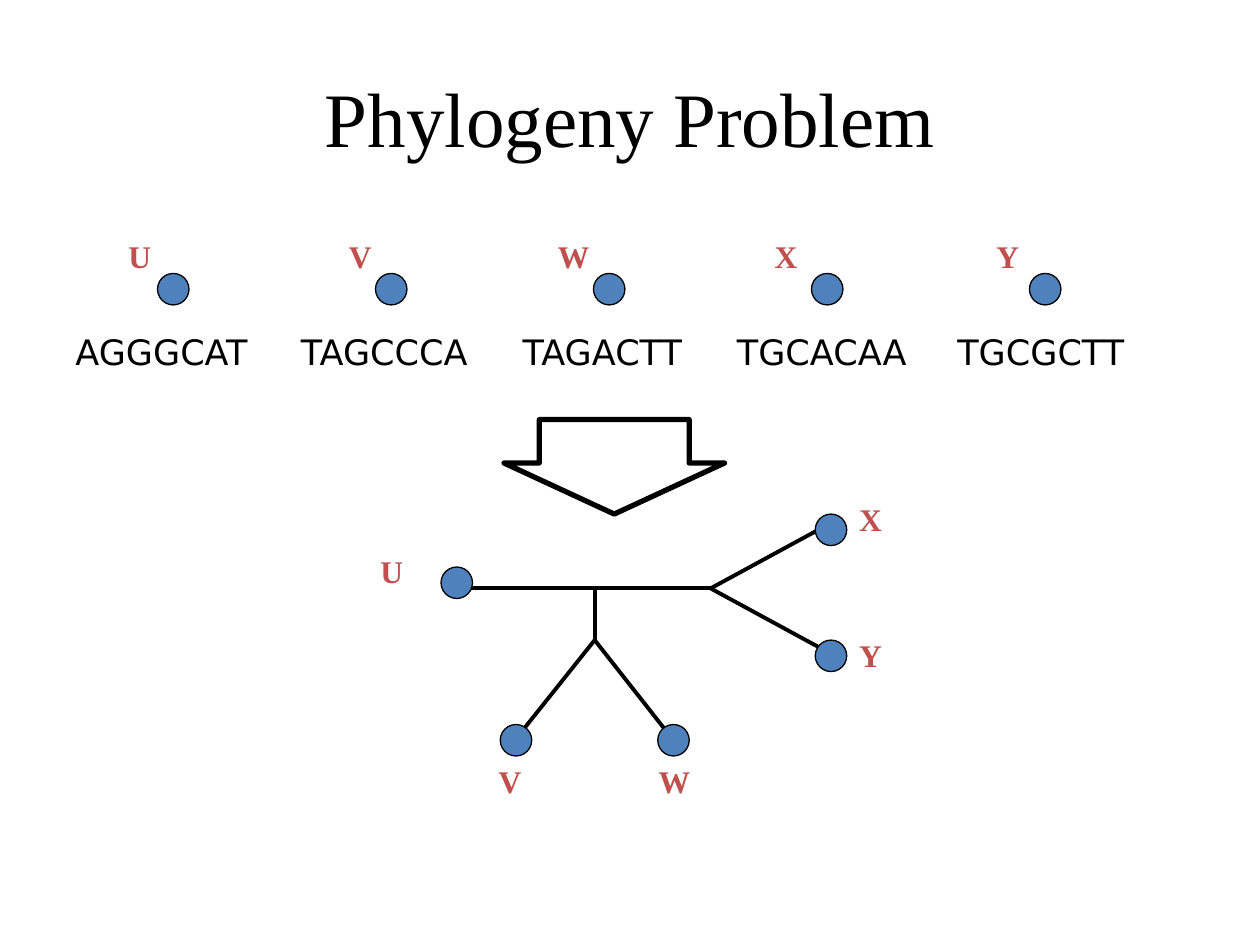
from lxml.etree import SubElement
from pptx import Presentation
from pptx.dml.color import RGBColor
from pptx.enum.shapes import MSO_CONNECTOR as Connector, MSO_SHAPE as Shape
from pptx.enum.text import MSO_ANCHOR as Anchor, MSO_AUTO_SIZE as AutoSize, PP_ALIGN as Align
from pptx.oxml.ns import qn
from pptx.util import Inches, Pt

BLACK, NODE_FILL, LABEL_RED = "000000", "4F81BD", "C0504D"
SERIF, SANS = "Times New Roman", "DejaVu Sans"
NODE_SIZE = 0.25
LABEL_HEIGHT = 0.5

# Species: name, label left, sequence, sequence left, sequence width
SPECIES = [
    ("U", 0.92, "AGGGCAT", 0.5, 1.59),
    ("V", 2.67, "TAGCCCA", 2.29, 1.55),
    ("W", 4.33, "TAGACTT", 4.05, 1.5),
    ("X", 6.05, "TGCACAA", 5.75, 1.55),
    ("Y", 7.81, "TGCGCTT", 7.5, 1.53),
]
ROW_LEFT, ROW_STEP = 1.25, 1.73
LABEL_TOP, NODE_TOP, SEQUENCE_TOP = 1.83, 2.17, 2.57

# Tree leaves: name, node corner, label corner
LEAVES = [
    ("U", (3.5, 4.5), (2.92, 4.33)),
    ("V", (3.97, 5.75), (3.86, 6)),
    ("W", (5.22, 5.75), (5.13, 6)),
    ("X", (6.47, 4.08), (6.72, 3.92)),
    ("Y", (6.47, 5.08), (6.72, 5)),
]
VW_FORK, XY_FORK, STEM_TOP = (4.72, 5.08), (5.64, 4.67), (4.72, 4.67)
BRANCHES = [
    ((4.05, 5.92), VW_FORK),
    ((5.38, 5.92), VW_FORK),
    ((3.67, 4.67), XY_FORK),
    (STEM_TOP, VW_FORK),
    ((6.56, 5.17), XY_FORK),
    ((6.56, 4.17), XY_FORK),
]

prs = Presentation()
prs.slide_width, prs.slide_height = Inches(10), Inches(7.5)
slide = prs.slides.add_slide(prs.slide_layouts[6])


def color(hex_value):
    return RGBColor.from_string(hex_value)


def add_text(text, left, top, width, height, size=18, font=SERIF, ink=BLACK,
             bold=False, align=Align.LEFT, anchor=Anchor.TOP, wrap=False):
    box = slide.shapes.add_textbox(*map(Inches, (left, top, width, height)))
    frame = box.text_frame
    frame.word_wrap = wrap
    frame.auto_size = AutoSize.NONE if wrap else AutoSize.SHAPE_TO_FIT_TEXT
    frame.vertical_anchor = anchor
    paragraph = frame.paragraphs[0]
    paragraph.alignment = align
    run = paragraph.add_run()
    run.text = text
    run.font.name, run.font.size, run.font.bold = font, Pt(size), bold
    run.font.color.rgb = color(ink)


def add_label(name, left, top):
    width = 0.53 if name == "W" else 0.44
    add_text(name, left, top, width, LABEL_HEIGHT, ink=LABEL_RED, bold=True)


def add_outlined(kind, left, top, width, height, line_width, fill=None):
    shape = slide.shapes.add_shape(kind, *map(Inches, (left, top, width, height)))
    shape.shadow.inherit = False
    if fill:
        shape.fill.solid()
        shape.fill.fore_color.rgb = color(fill)
    else:
        shape.fill.background()
    shape.line.color.rgb = color(BLACK)
    shape.line.width = Pt(line_width)
    return shape


def add_node(left, top):
    add_outlined(Shape.OVAL, left, top, NODE_SIZE, NODE_SIZE, 0.75, NODE_FILL)


def add_branch(start, end):
    branch = slide.shapes.add_connector(Connector.STRAIGHT, *map(Inches, start + end))
    branch.line.color.rgb = color(BLACK)
    branch.line.width = Pt(2.25)
    SubElement(branch._element.spPr, qn("a:effectLst"))


# Tree branches, behind the nodes
for start, end in BRANCHES:
    add_branch(start, end)

# Title
add_text("Phylogeny Problem", 0.5, 0.3, 9, 1.25, size=44,
         align=Align.CENTER, anchor=Anchor.MIDDLE, wrap=True)

# Row of species with their sequences
for column, (name, label_left, sequence, sequence_left, width) in enumerate(SPECIES):
    add_text(sequence, sequence_left, SEQUENCE_TOP, width, 0.44, size=20, font=SANS)
    add_node(ROW_LEFT + column * ROW_STEP, NODE_TOP)
    add_label(name, label_left, LABEL_TOP)

# Arrow from the sequences to the tree
arrow = add_outlined(Shape.DOWN_ARROW, 4, 3.33, 1.75, 0.75, 3)
arrow.adjustments[0], arrow.adjustments[1] = 0.68, 0.54

# Tree leaves
for name, node_corner, label_corner in LEAVES:
    add_label(name, *label_corner)
    add_node(*node_corner)

prs.save("out.pptx")
